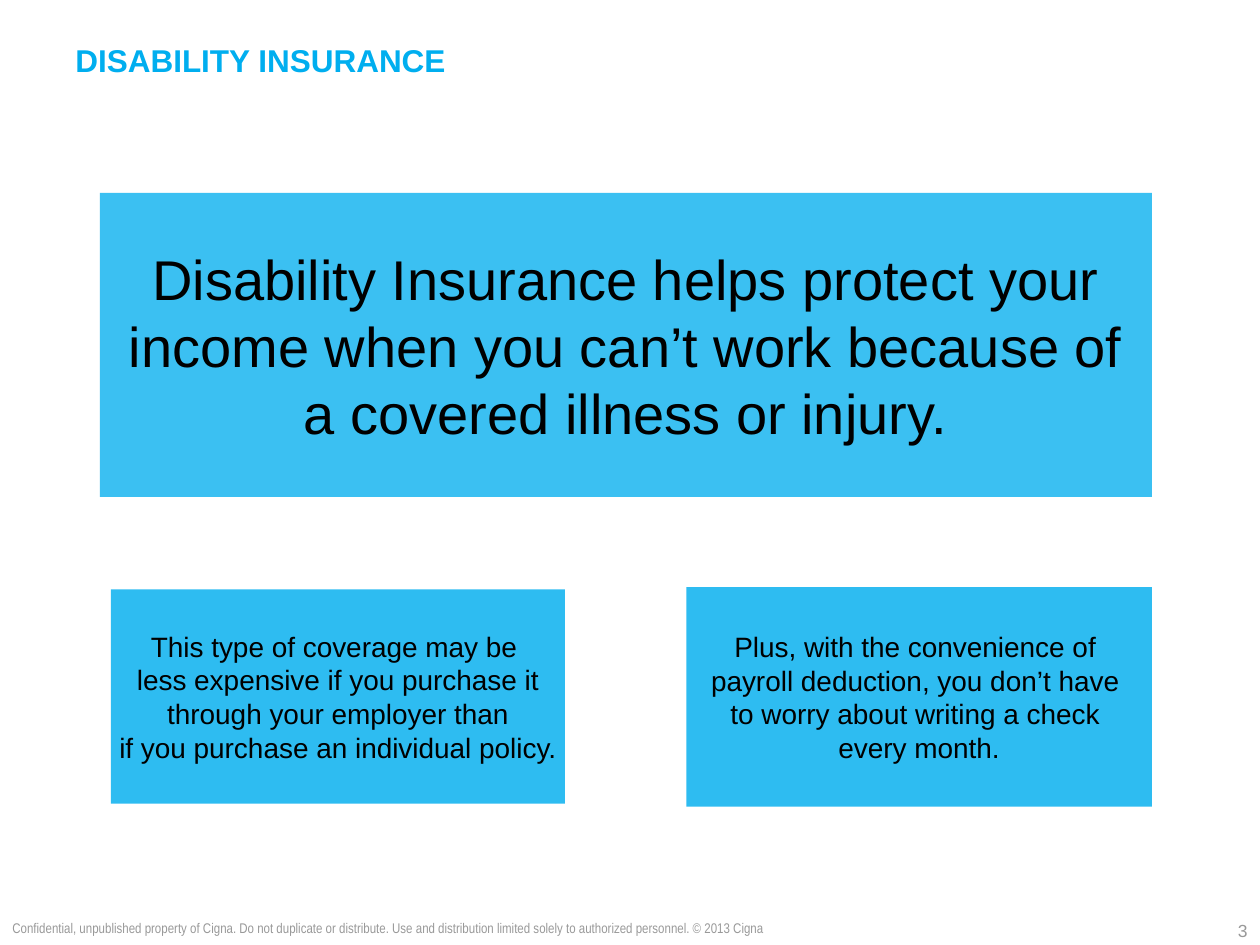
from copy import deepcopy

from lxml import etree
from pptx import Presentation
from pptx.dml.color import RGBColor
from pptx.enum.shapes import MSO_SHAPE
from pptx.enum.text import MSO_ANCHOR, PP_ALIGN
from pptx.oxml.ns import qn
from pptx.util import Pt

RECTANGLE = MSO_SHAPE.RECTANGLE
TOP, MIDDLE = MSO_ANCHOR.TOP, MSO_ANCHOR.MIDDLE
LEFT, CENTER, RIGHT = PP_ALIGN.LEFT, PP_ALIGN.CENTER, PP_ALIGN.RIGHT

CYAN = RGBColor(0x00, 0xAE, 0xEF)
BLACK = RGBColor(0x00, 0x00, 0x00)
GRAY = RGBColor(0x99, 0x99, 0x99)

TITLE = "DISABILITY INSURANCE"
PAGE_NUMBER = "3"
FOOTER = (
    "Confidential, unpublished property of Cigna. Do not duplicate or distribute. "
    "Use and distribution limited solely to authorized personnel. © 2013 Cigna"
)
MAIN_MESSAGE = (
    "Disability Insurance helps protect your income when you can’t work "
    "because of a covered illness or injury."
)
COST_LINES = [
    "This type of coverage may be ",
    "less expensive if you purchase it",
    " through your employer than ",
    "if you purchase an individual policy.",
]
PAYROLL_LINES = [
    "Plus, with the convenience of ",
    "payroll deduction, you don’t have ",
    "to worry about writing a check ",
    "every month.",
]

LABELS = [
    (PAGE_NUMBER, (552.5, 522, 167.5, 16.5), RIGHT, None,
     {"name": "Arial", "size": Pt(10)}, GRAY),
    (FOOTER, (0, 522, 552.5, 18), LEFT, None,
     {"name": "Arial Narrow", "size": Pt(8)}, GRAY),
    (TITLE, (36, 21.6, 648, 90), LEFT, Pt(20),
     {"name": "Arial", "size": Pt(18), "bold": True}, CYAN),
]
PANELS = [
    ([MAIN_MESSAGE], (57, 110.2, 601.2, 173.8), 77, 32, True),
    (COST_LINES, (63.4, 336.8, 259.4, 122.4), 82, 16, False),
    (PAYROLL_LINES, (392.2, 335.5, 266, 125.5), 82, 16, False),
]


def write_text(shape, lines, alignment, anchor, wrap, font, color, spacing=None):
    frame = shape.text_frame
    frame.word_wrap = wrap
    frame.vertical_anchor = anchor
    paragraph = frame.paragraphs[0]
    paragraph.text = "\v".join(lines)
    paragraph.alignment = alignment
    if spacing:
        paragraph.line_spacing = spacing
    for run in paragraph.runs:
        for attribute, value in font.items():
            setattr(run.font, attribute, value)
        run.font.color.rgb = color
    for line_break in paragraph._p.findall(qn("a:br")):
        line_break.append(deepcopy(paragraph.runs[0]._r.rPr))


def add_label(slide, text, box, alignment, spacing, font, color):
    shape = slide.shapes.add_textbox(*map(Pt, box))
    write_text(shape, [text], alignment, TOP, True, font, color, spacing)


def add_panel(slide, lines, box, opacity, size, wrap):
    shape = slide.shapes.add_shape(RECTANGLE, *map(Pt, box))
    shape.shadow.inherit = False
    shape.line.fill.background()
    shape.fill.solid()
    shape.fill.fore_color.rgb = CYAN
    color_element = shape._element.spPr.find(qn("a:solidFill"))[0]
    etree.SubElement(color_element, qn("a:alpha"), val=str(opacity * 1000))
    font = {"name": "Arial", "size": Pt(size)}
    write_text(shape, lines, CENTER, MIDDLE, wrap, font, BLACK)


def main():
    presentation = Presentation()
    presentation.slide_width = Pt(720)
    presentation.slide_height = Pt(540)
    slide = presentation.slides.add_slide(presentation.slide_layouts[6])
    for panel in PANELS:
        add_panel(slide, *panel)
    for label in LABELS:
        add_label(slide, *label)
    presentation.save("out.pptx")


if __name__ == "__main__":
    main()
